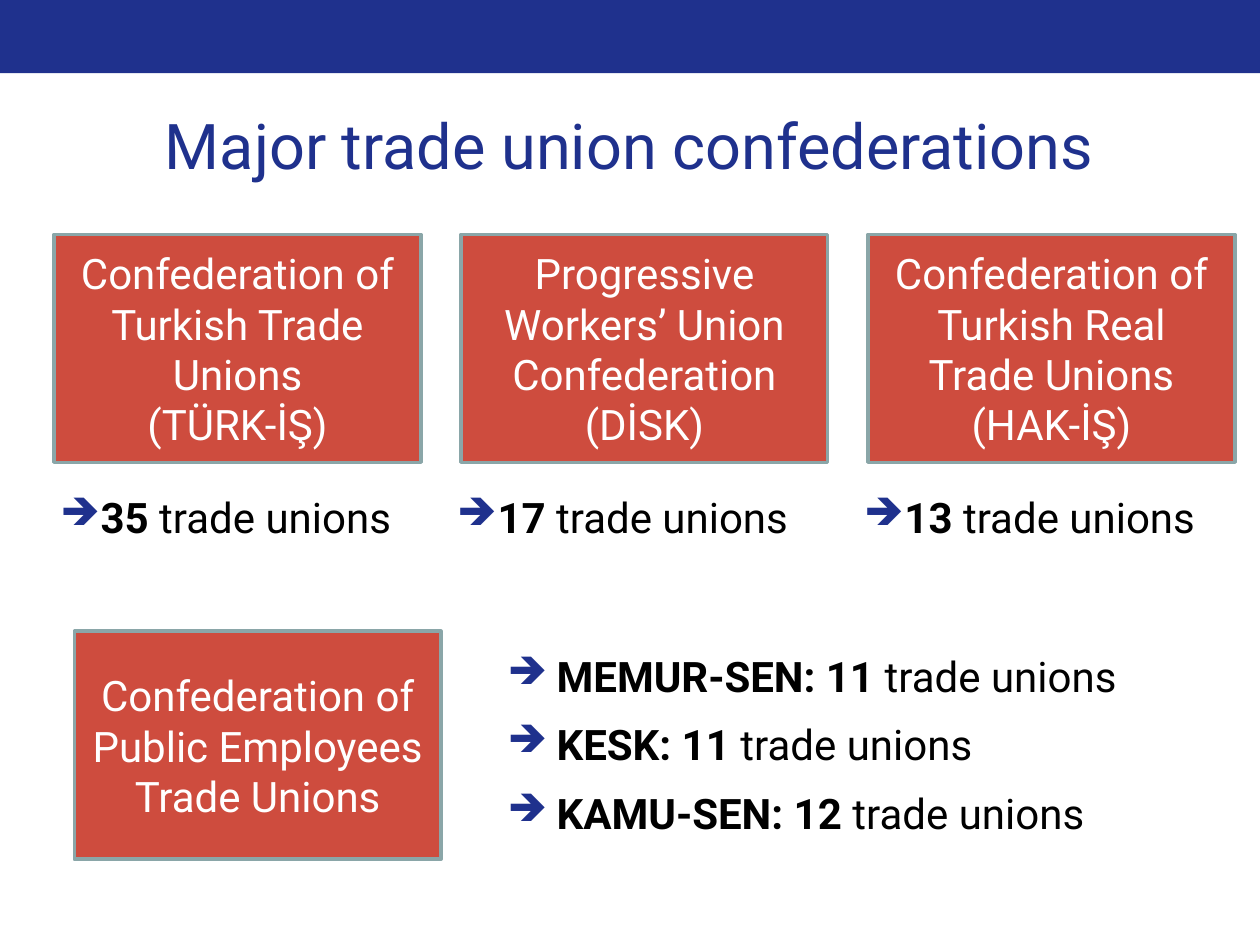
"""Build a slide on the major Turkish trade union confederations."""
from dataclasses import dataclass

import lxml.etree
import pptx
import pptx.dml.color
import pptx.enum.shapes
import pptx.enum.text
import pptx.oxml.ns
import pptx.util

Inches = pptx.util.Inches
Pt = pptx.util.Pt
RGBColor = pptx.dml.color.RGBColor
Align = pptx.enum.text.PP_ALIGN
Anchor = pptx.enum.text.MSO_ANCHOR

NAVY = RGBColor(0x1F, 0x31, 0x8D)
RED = RGBColor(0xCE, 0x4C, 0x3E)
GREY = RGBColor(0x8A, 0xA6, 0xA8)
WHITE = RGBColor(0xFF, 0xFF, 0xFF)
BLACK = RGBColor(0x00, 0x00, 0x00)
FONT = "Roboto"
CARD_WIDTH, CARD_HEIGHT = 2.91, 1.81
CARD_LEFT, CARD_TOP, CARD_PITCH = 0.43, 1.86, 3.23


@dataclass
class Card:
    left: float
    top: float
    lines: list[str]


@dataclass
class BulletList:
    left: float
    top: float
    width: float
    height: float
    items: list[str]
    margin: float = 0.81
    hanging: float = 0.31


def set_font(para, size: float, color: RGBColor) -> None:
    para.font.name = FONT
    para.font.size = Pt(size)
    para.font.color.rgb = color


def add_rectangle(page, left: float, top: float, width: float, height: float, fill: RGBColor):
    box = page.shapes.add_shape(
        pptx.enum.shapes.MSO_SHAPE.RECTANGLE,
        Inches(left), Inches(top), Inches(width), Inches(height))
    box.shadow.inherit = False
    box.fill.solid()
    box.fill.fore_color.rgb = fill
    box.line.fill.background()
    return box


def add_text_frame(page, left: float, top: float, width: float, height: float):
    box = page.shapes.add_textbox(Inches(left), Inches(top), Inches(width), Inches(height))
    box.text_frame.word_wrap = True
    return box.text_frame


def add_title(page, text: str) -> None:
    frame = add_text_frame(page, 0.33, 0.83, 9.33, 0.63)
    frame.vertical_anchor = Anchor.MIDDLE
    para = frame.paragraphs[0]
    para.text = text
    para.alignment = Align.CENTER
    set_font(para, 36, NAVY)


def add_card(page, card: Card) -> None:
    box = add_rectangle(page, card.left, card.top, CARD_WIDTH, CARD_HEIGHT, RED)
    box.line.color.rgb = GREY
    box.line.width = Pt(2)
    frame = box.text_frame
    frame.word_wrap = True
    frame.vertical_anchor = Anchor.MIDDLE
    frame.text = "\n".join(card.lines)
    for para in frame.paragraphs:
        para.alignment = Align.CENTER
        set_font(para, 24, WHITE)


def add_arrow_bullet(para, margin: float, hanging: float) -> None:
    properties = para._p.get_or_add_pPr()
    properties.set("marL", str(Inches(margin)))
    properties.set("indent", str(-Inches(hanging)))
    qn = pptx.oxml.ns.qn
    color = lxml.etree.SubElement(properties, qn("a:buClr"))
    lxml.etree.SubElement(color, qn("a:srgbClr"), val=str(NAVY))
    lxml.etree.SubElement(properties, qn("a:buSzPct"), val="90000")
    lxml.etree.SubElement(properties, qn("a:buChar"), char="➔")


def add_bullet_list(page, block: BulletList) -> None:
    frame = add_text_frame(page, block.left, block.top, block.width, block.height)
    for index, item in enumerate(block.items):
        para = frame.add_paragraph() if index else frame.paragraphs[0]
        add_arrow_bullet(para, block.margin, block.hanging)
        set_font(para, 24, BLACK)
        para.space_before = Pt(5.5 if index else 0)
        para.space_after = Pt(5 if len(block.items) > 1 else 0)
        for text, bold in ((f"{item} ", True), ("trade unions", False)):
            span = para.add_run()
            span.text = text
            span.font.bold = bold


def main() -> None:
    deck = pptx.Presentation()
    deck.slide_width, deck.slide_height = Inches(10), Inches(7.5)
    page = deck.slides.add_slide(deck.slide_layouts[6])

    add_rectangle(page, 0, 0, 10, 0.58, NAVY)
    add_title(page, "Major trade union confederations")

    confederations = [
        ("Confederation of Turkish Trade Unions", "(TÜRK-İŞ)", "35", -0.12),
        ("Progressive Workers’ Union Confederation", "(DİSK)", "17", 3.03),
        ("Confederation of Turkish Real Trade Unions", "(HAK-İŞ)", "13", 6.26),
    ]
    for column, (name, acronym, count, count_left) in enumerate(confederations):
        add_card(page, Card(CARD_LEFT + column * CARD_PITCH, CARD_TOP, [name, acronym]))
        add_bullet_list(page, BulletList(count_left, 3.85, 3.62, 0.8, [count]))

    add_card(page, Card(0.59, 5.01, ["Confederation of Public Employees Trade Unions"]))
    add_bullet_list(page, BulletList(
        3.43, 5.11, 6.46, 2.13, ["MEMUR-SEN: 11", "KESK: 11", "KAMU-SEN: 12"],
        margin=0.89, hanging=0.39))

    deck.save("out.pptx")


if __name__ == "__main__":
    main()
